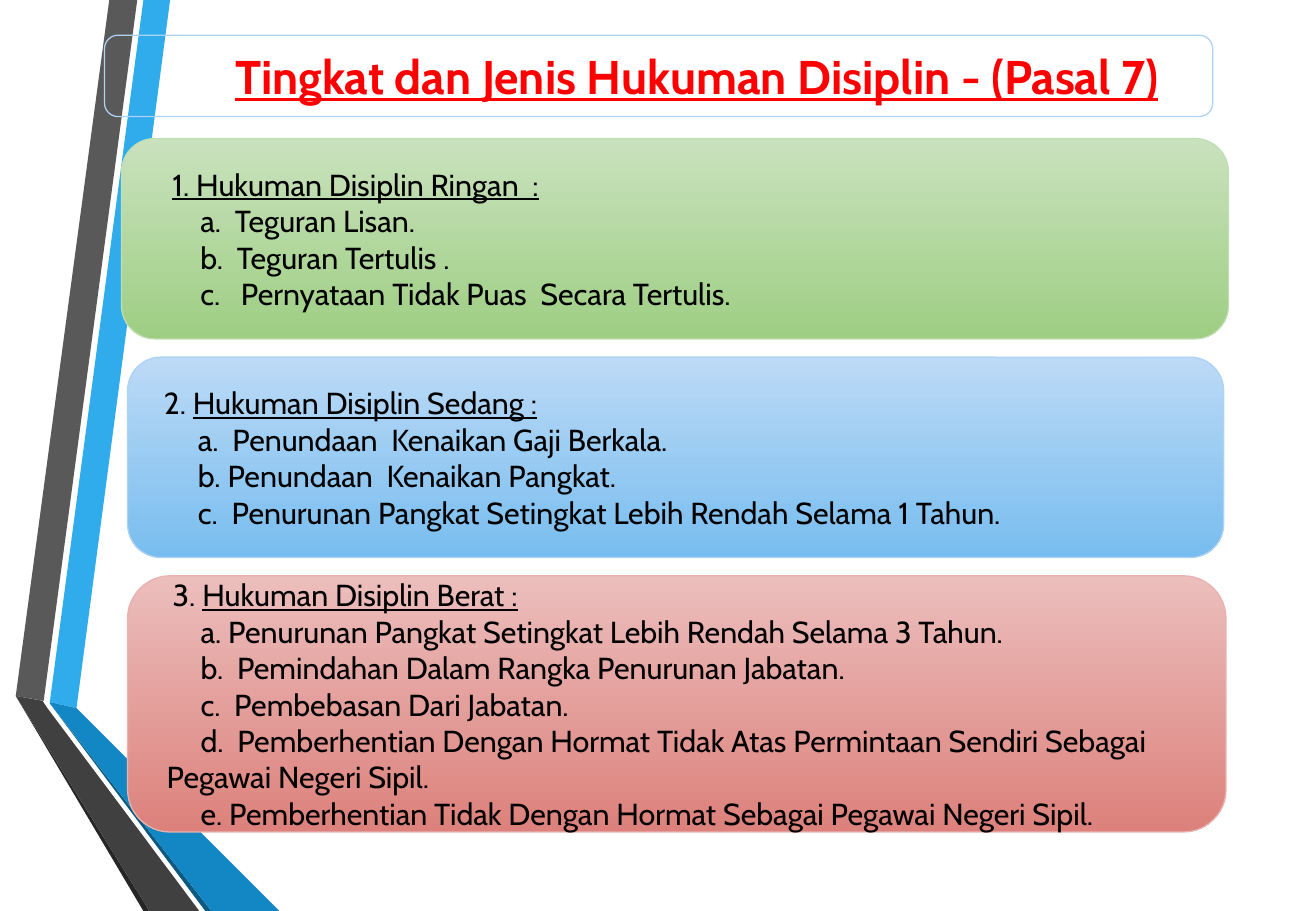
import pptx
import pptx.dml.color
import pptx.enum.shapes
import pptx.enum.text
import pptx.util

Inches = pptx.util.Inches
Pt = pptx.util.Pt

FONT = "Cabin"
COLORS = {
    "text": "000000",
    "title": "FF0000",
    "title_line": "AED2F4",
    "blue_light": "30ACEC",
    "blue": "1287C3",
    "blue_dark": "0C5A82",
    "gray_light": "595959",
    "gray": "404040",
    "gray_dark": "262626",
    "mild_top": "C9E2BE", "mild_bottom": "9ECE83", "mild_line": "C0DEB3",
    "medium_top": "BCDAF6", "medium_bottom": "78BDEF", "medium_line": "AED2F4",
    "severe_top": "EBBEBC", "severe_bottom": "DD817C", "severe_line": "E8B2AF",
}

RIBBONS = [
    ("blue_light", [(0.41, 5.78), (0.63, 5.83), (1.4, 0), (1.18, 0)]),
    ("gray_light", [(1.13, 0), (0.9, 0), (0.13, 5.73), (0.36, 5.77)]),
    ("gray_dark", [(0.13, 5.73), (1.18, 7.5), (1.23, 7.5)]),
    ("blue_dark", [(0.41, 5.79), (1.69, 7.5), (1.74, 7.5)]),
    ("blue", [(0.41, 5.79), (1.74, 7.5), (2.3, 7.5), (0.63, 5.83), (0.41, 5.78)]),
    ("gray", [(1.64, 7.5), (0.39, 5.83), (0.35, 5.77), (0.13, 5.73), (1.23, 7.5)]),
]

# Level, place, left margin, heading indent, item indent, number, heading, items
PENALTIES = [
    ("mild", (1, 1.14, 9.11, 1.65), 0.19, 0.05, 0.28,
     "1. ", "Hukuman Disiplin Ringan  :", [
         "a.  Teguran Lisan.",
         "b.  Teguran Tertulis .",
         "c.   Pernyataan Tidak Puas  Secara Tertulis.",
     ]),
    ("medium", (1.05, 2.94, 9.02, 1.65), 0, 0.12, 0.4,
     "2. ", "Hukuman Disiplin Sedang :", [
         "a.  Penundaan  Kenaikan Gaji Berkala.",
         "b. Penundaan  Kenaikan Pangkat.",
         "c.  Penurunan Pangkat Setingkat Lebih Rendah Selama 1 Tahun.",
     ]),
    ("severe", (1.05, 4.74, 9.04, 2.11), 0.12, 0.05, 0.28,
     "3. ", "Hukuman Disiplin Berat :", [
         "a. Penurunan Pangkat Setingkat Lebih Rendah Selama 3 Tahun.",
         "b.  Pemindahan Dalam Rangka Penurunan Jabatan.",
         "c.  Pembebasan Dari Jabatan.",
         "d.  Pemberhentian Dengan Hormat Tidak Atas Permintaan Sendiri "
         "Sebagai Pegawai Negeri Sipil.",
         "e. Pemberhentian Tidak Dengan Hormat Sebagai Pegawai Negeri Sipil.",
     ]),
]


def rgb(name):
    return pptx.dml.color.RGBColor.from_string(COLORS[name])


def add_ribbon(page, color, points):
    corners = [(Inches(x), Inches(y)) for x, y in points]
    builder = page.shapes.build_freeform(*corners[0])
    builder.add_line_segments(corners[1:], close=True)
    ribbon = builder.convert_to_shape()
    ribbon.shadow.inherit = False
    ribbon.fill.solid()
    ribbon.fill.fore_color.rgb = rgb(color)
    ribbon.line.fill.background()


def add_rounded_box(page, place, line):
    """Add an unfilled rounded box whose text is centred vertically."""
    box = page.shapes.add_shape(
        pptx.enum.shapes.MSO_SHAPE.ROUNDED_RECTANGLE, *map(Inches, place))
    box.shadow.inherit = False
    box.fill.background()
    box.line.color.rgb = rgb(line)
    box.line.width = Pt(0.75)
    box.text_frame.word_wrap = True
    box.text_frame.vertical_anchor = pptx.enum.text.MSO_ANCHOR.MIDDLE
    return box


def fill_gradient(box, level):
    box.fill.gradient()
    box.fill.gradient_angle = 270
    for stop, end in zip(box.fill.gradient_stops, ("top", "bottom")):
        stop.color.rgb = rgb(f"{level}_{end}")


def set_paragraph(para, margin, indent, align=pptx.enum.text.PP_ALIGN.LEFT):
    para.alignment = align
    properties = para._p.get_or_add_pPr()
    properties.set("marL", str(Inches(margin)))
    properties.set("indent", str(Inches(indent)))


def add_span(para, text, size=18, color="text", bold=False, underline=False):
    span = para.add_run()
    span.text = text
    span.font.name = FONT
    span.font.size = Pt(size)
    span.font.color.rgb = rgb(color)
    span.font.bold = bold
    span.font.underline = underline


def add_title(page):
    box = add_rounded_box(page, (0.86, 0.29, 9.12, 0.67), "title_line")
    para = box.text_frame.paragraphs[0]
    set_paragraph(para, 0.56, 0.07, pptx.enum.text.PP_ALIGN.CENTER)
    add_span(para, "Tingkat dan Jenis Hukuman Disiplin - (Pasal 7)",
             size=28, color="title", bold=True, underline=True)


def add_penalty(page, level, place, margin, heading_indent, item_indent,
                number, heading, items):
    box = add_rounded_box(page, place, f"{level}_line")
    fill_gradient(box, level)
    para = box.text_frame.paragraphs[0]
    set_paragraph(para, margin, heading_indent)
    add_span(para, number, underline=level == "mild")
    add_span(para, heading, underline=True)
    for item in items:
        para = box.text_frame.add_paragraph()
        set_paragraph(para, margin, item_indent)
        add_span(para, item)


def main():
    deck = pptx.Presentation()
    deck.slide_width = Inches(10.83)
    deck.slide_height = Inches(7.5)
    page = deck.slides.add_slide(deck.slide_layouts[6])
    for color, points in RIBBONS:
        add_ribbon(page, color, points)
    for penalty in PENALTIES:
        add_penalty(page, *penalty)
    add_title(page)
    deck.save("out.pptx")


if __name__ == "__main__":
    main()
